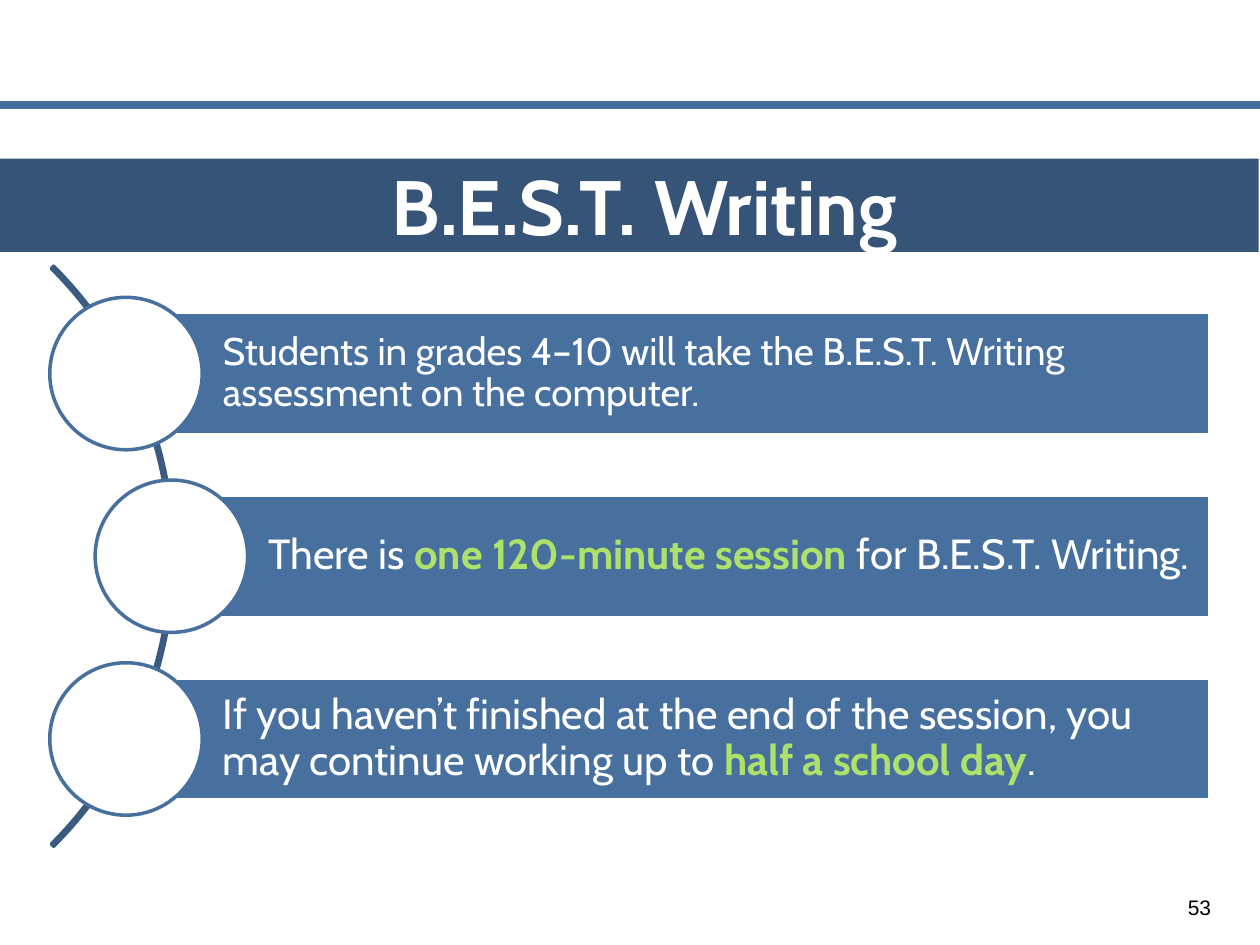
from dataclasses import dataclass

from lxml.etree import SubElement
from pptx import Presentation
from pptx.dml.color import RGBColor
from pptx.enum.shapes import MSO_CONNECTOR, MSO_SHAPE as SHAPE
from pptx.enum.text import MSO_ANCHOR as ANCHOR, MSO_AUTO_SIZE, PP_ALIGN as ALIGN
from pptx.oxml.ns import qn
from pptx.util import Inches, Pt


@dataclass(frozen=True)
class Theme:
    rule: RGBColor = RGBColor(0x44, 0x6D, 0x9E)
    arc: RGBColor = RGBColor(0x3A, 0x5A, 0x7F)
    bar: RGBColor = RGBColor(0x48, 0x70, 0x9F)
    banner: RGBColor = RGBColor(0x36, 0x54, 0x77)
    accent: RGBColor = RGBColor(0xAE, 0xE1, 0x69)
    white: RGBColor = RGBColor(0xFF, 0xFF, 0xFF)
    black: RGBColor = RGBColor(0, 0, 0)
    font: str = "Cabin"
    number_font: str = "Arial"
    title_size: int = 44
    number_size: int = 12
    line: int = 2
    rule_line: float = 4.5


@dataclass(frozen=True)
class Phrase:
    text: str
    strong: bool = False


@dataclass(frozen=True)
class Step:
    left: float
    size: int
    inset: float
    phrases: tuple[Phrase, ...]


T = Theme()
RIGHT, FIRST_TOP, PITCH, BAR_H, CIRCLE = 9.6, 2.48, 1.45, 0.97, 1.21
STEPS = (
    Step(1, 22, 0.06, (
        Phrase("Students in grades 4–10 will take the B.E.S.T. Writing "
               "assessment on the computer."),
    )),
    Step(1.36, 24, 0.07, (
        Phrase("There is "),
        Phrase("one 120-minute session ", True),
        Phrase("for B.E.S.T. Writing."),
    )),
    Step(1, 24, 0.07, (
        Phrase("If you haven’t finished at the end of the session, you "
               "may continue working up to "),
        Phrase("half a school day", True),
        Phrase("."),
    )),
)


def add_run(p, text: str, size: int, color: RGBColor,
            bold: bool = False, font: str = T.font) -> None:
    r = p.add_run()
    r.text = text
    r.font.name, r.font.size, r.font.bold = font, Pt(size), bold
    r.font.color.rgb = color


def set_insets(tf, left: float, other: float) -> None:
    tf.margin_left = Inches(left)
    tf.margin_top = tf.margin_right = tf.margin_bottom = Inches(other)


def add_outlined(s, kind, box: tuple[float, ...], fill: RGBColor | None, line: RGBColor):
    sp = s.shapes.add_shape(kind, *map(Inches, box))
    sp.shadow.inherit = False
    if fill is None:
        sp.fill.background()
    else:
        sp.fill.solid()
        sp.fill.fore_color.rgb = fill
    sp.line.color.rgb = line
    sp.line.width = Pt(T.line)
    return sp


def add_rule(s) -> None:
    y = Inches(0.83)
    sp = s.shapes.add_connector(MSO_CONNECTOR.STRAIGHT, 0, y, Inches(10), y)
    sp.line.color.rgb = T.rule
    sp.line.width = Pt(T.rule_line)
    SubElement(sp._element.spPr, qn("a:effectLst"))


def add_arc(s) -> None:
    sp = add_outlined(s, SHAPE.BLOCK_ARC, (-5.13, 1.16, 6.51, 6.51), None, T.arc)
    for i, value in enumerate((189, 27, 0.004)):
        sp.adjustments[i] = value


def add_step(s, step: Step, top: float) -> None:
    bar = add_outlined(s, SHAPE.RECTANGLE,
                       (step.left, top, RIGHT - step.left, BAR_H), T.bar, T.white)
    tf = bar.text_frame
    tf.word_wrap = True
    tf.vertical_anchor = ANCHOR.MIDDLE
    set_insets(tf, 0.77, step.inset)
    p = tf.paragraphs[0]
    p.alignment = ALIGN.LEFT
    p.line_spacing = 0.9
    for phrase in step.phrases:
        add_run(p, phrase.text, step.size,
                T.accent if phrase.strong else T.white, phrase.strong)
    circle = (step.left - CIRCLE / 2, top + (BAR_H - CIRCLE) / 2, CIRCLE, CIRCLE)
    add_outlined(s, SHAPE.OVAL, circle, T.white, T.bar)


def add_number(s, text: str) -> None:
    sp = s.shapes.add_textbox(Inches(9.29), Inches(7), Inches(0.46), Inches(0.4))
    tf = sp.text_frame
    tf.word_wrap = True
    tf.vertical_anchor = ANCHOR.MIDDLE
    p = tf.paragraphs[0]
    p.alignment = ALIGN.CENTER
    add_run(p, text, T.number_size, T.black, font=T.number_font)


def set_title(s, text: str) -> None:
    sp = s.shapes.title
    sp.left, sp.top, sp.width, sp.height = map(Inches, (-0.01, 1.26, 10, 0.74))
    sp.fill.solid()
    sp.fill.fore_color.rgb = T.banner
    tf = sp.text_frame
    tf.auto_size = MSO_AUTO_SIZE.NONE
    tf.word_wrap = True
    tf.vertical_anchor = ANCHOR.TOP
    set_insets(tf, 0, 0)
    p = tf.paragraphs[0]
    p.alignment = ALIGN.CENTER
    p._p.get_or_add_pPr().set("marL", str(Inches(0.25)))
    add_run(p, text, T.title_size, T.white, True)


def main() -> None:
    prs = Presentation()
    prs.slide_width, prs.slide_height = Inches(10), Inches(7.5)
    s = prs.slides.add_slide(prs.slide_layouts[5])
    set_title(s, "B.E.S.T. Writing")
    add_rule(s)
    add_arc(s)
    for i, step in enumerate(STEPS):
        add_step(s, step, FIRST_TOP + i * PITCH)
    add_number(s, "53")
    prs.save("out.pptx")


if __name__ == "__main__":
    main()
